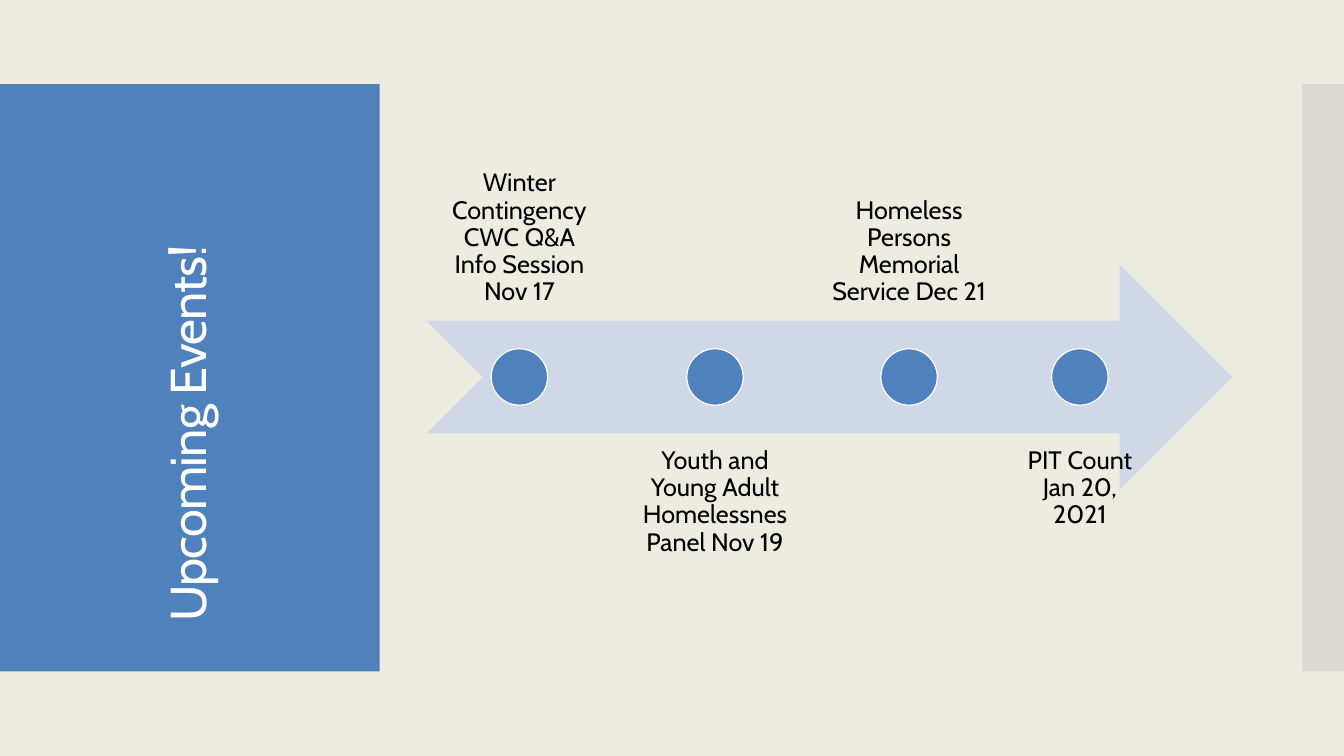
import pptx
import pptx.dml.color
import pptx.enum.shapes
import pptx.enum.text
import pptx.oxml
import pptx.oxml.ns
import pptx.util

Cm = pptx.util.Cm
SHAPE = pptx.enum.shapes.MSO_SHAPE
ANCHOR = pptx.enum.text.MSO_ANCHOR
ALIGN = pptx.enum.text.PP_ALIGN

BLUE = "4F81BD"
WHITE = "FFFFFF"
# Event text and the width of its column in cm
EVENTS = [
    ("Winter Contingency CWC Q&A Info Session Nov 17", 4.7),
    ("Youth and Young Adult Homelessnes Panel Nov 19", 4.8),
    ("Homeless Persons Memorial Service Dec 21", 4.62),
    ("PIT Count Jan 20, 2021", 3.63),
]
COLUMN_GAP = 0.18


def rgb(value):
    return pptx.dml.color.RGBColor.from_string(value)


def add_filled(slide, kind, left, top, width, height, fill, line=None, alpha=None):
    """Add a flat preset shape, with lengths in cm and alpha in percent."""
    shape = slide.shapes.add_shape(kind, Cm(left), Cm(top), Cm(width), Cm(height))
    shape.shadow.inherit = False
    shape.fill.solid()
    shape.fill.fore_color.rgb = rgb(fill)
    if line:
        shape.line.color.rgb = rgb(line)
        shape.line.width = pptx.util.Pt(0.85)
    else:
        shape.line.fill.background()
    if alpha is not None:
        color = shape._element.spPr.find(".//" + pptx.oxml.ns.qn("a:srgbClr"))
        opacity = pptx.oxml.parse_xml(
            f'<a:alpha {pptx.oxml.ns.nsdecls("a")} val="{alpha * 1000}"/>')
        color.append(opacity)


def write_text(frame, text, size, color, align, anchor, inset, tracking=None):
    """Fill a text frame; inset is in cm and tracking in points."""
    frame.word_wrap = True
    frame.auto_size = pptx.enum.text.MSO_AUTO_SIZE.NONE
    frame.vertical_anchor = anchor
    frame.margin_left = frame.margin_right = Cm(inset)
    frame.margin_top = frame.margin_bottom = Cm(inset)
    paragraph = frame.paragraphs[0]
    paragraph.alignment = align
    paragraph.line_spacing = 0.9
    run = paragraph.add_run()
    run.text = text
    run.font.name = "Cabin"
    run.font.size = pptx.util.Pt(size)
    run.font.color.rgb = rgb(color)
    if tracking is not None:
        run._r.get_or_add_rPr().set("spc", str(round(tracking * 100)))


def add_title_panel(slide, left, top, width, height):
    add_filled(slide, SHAPE.RECTANGLE, left, top, width, height, BLUE)
    title = slide.shapes.title
    slide.shapes._spTree.append(title._element)  # in front of the panel
    title.left, title.top = Cm(left - 2.08), Cm(top + 0.52)
    title.width, title.height = Cm(13.74), Cm(12.78)
    title.rotation = 270
    write_text(title.text_frame, "Upcoming Events!", size=36, color=WHITE,
               align=ALIGN.LEFT, anchor=ANCHOR.MIDDLE, inset=0.25, tracking=-0.6)


def add_timeline(slide, left, top, width, height):
    """Draw the arrow with events alternating above and below it."""
    band = height * 0.4
    middle = top + height / 2
    dot = band / 4
    add_filled(slide, SHAPE.NOTCHED_RIGHT_ARROW, left, middle - band / 2,
               width, band, "D0D8E8")
    for index, (event, column) in enumerate(EVENTS):
        above = index % 2 == 0
        label_top = top if above else top + height - band
        label = slide.shapes.add_textbox(Cm(left), Cm(label_top), Cm(column), Cm(band))
        write_text(label.text_frame, event, size=18, color="000000",
                   align=ALIGN.CENTER, inset=0.36,
                   anchor=ANCHOR.BOTTOM if above else ANCHOR.TOP)
        add_filled(slide, SHAPE.OVAL, left + (column - dot) / 2, middle - dot / 2,
                   dot, dot, BLUE, line=WHITE)
        left += column + COLUMN_GAP


def main():
    deck = pptx.Presentation()
    deck.slide_width, deck.slide_height = Cm(33.87), Cm(19.05)
    slide = deck.slides.add_slide(deck.slide_layouts[5])
    slide.background.fill.solid()
    slide.background.fill.fore_color.rgb = rgb("EEECE1")
    add_title_panel(slide, 0, 2.12, 9.57, 14.8)
    add_filled(slide, SHAPE.RECTANGLE, 32.82, 2.12, 1.05, 14.8, "C8C8C8", alpha=50)
    add_timeline(slide, 10.74, 2.39, 20.32, 14.22)
    deck.save("out.pptx")


if __name__ == "__main__":
    main()
